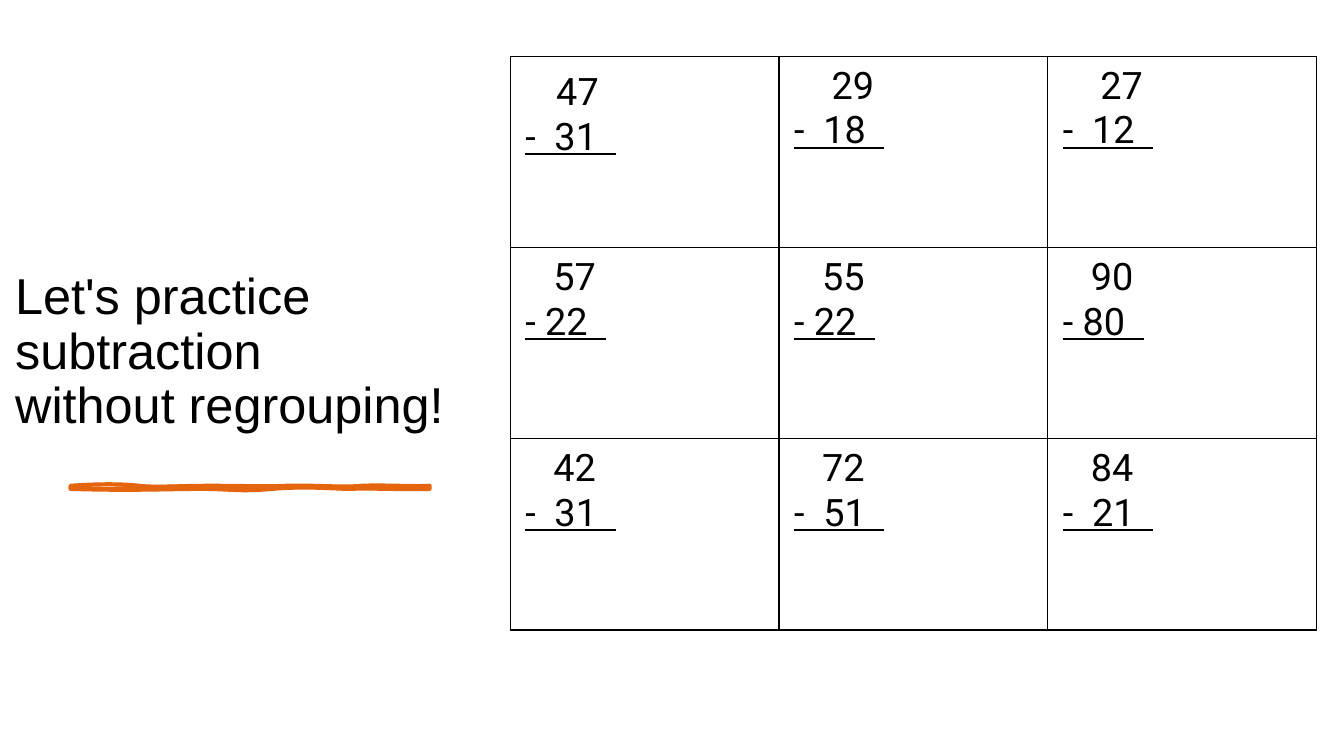
from copy import deepcopy

from lxml import etree
from pptx import Presentation
from pptx.dml.color import RGBColor
from pptx.enum.shapes import MSO_SHAPE
from pptx.enum.text import MSO_ANCHOR, MSO_AUTO_SIZE, PP_ALIGN
from pptx.oxml.ns import qn
from pptx.util import Inches, Pt

W, H = 13.33, 7.5
BLACK, WHITE, ORANGE = "000000", "FFFFFF", "E4650E"
NBSP = chr(160)
SPACE = 0.093
NARROW, WIDE = NBSP, NBSP + " "

PROBLEMS = [
    [(47, 31, 3.3, WIDE), (29, 18, 4, WIDE), (27, 12, 4, WIDE)],
    [(57, 22, 3, NARROW), (55, 22, 3, NARROW), (90, 80, 3, NARROW)],
    [(42, 31, 3, WIDE), (72, 51, 3, WIDE), (84, 21, 3, WIDE)],
]

OUTER_STROKE = [
    (27, -2, 51, -2, 68, 0), (85, 2, 107, 0, 139, 0), (171, 0, 190, 1, 214, 0),
    (238, -1, 269, 2, 289, 0), (309, -1, 342, 1, 356, 0), (356, 1, 356, 3, 356, 3),
    (338, 4, 294, 2, 278, 3), (262, 3, 234, 0, 200, 3), (165, 6, 161, 3, 129, 3),
    (96, 3, 62, 5, 0, 3), (0, 2, 0, 1, 0, 0),
]
INNER_STROKE = [
    (32, 2, 40, 1, 68, 0), (96, -1, 99, -2, 129, 0), (158, 2, 191, 1, 207, 0),
    (223, -1, 257, 3, 274, 0), (292, -2, 327, 4, 356, 0), (356, 2, 356, 2, 356, 3),
    (342, 3, 302, 6, 285, 3), (268, 1, 239, 3, 207, 3), (174, 3, 170, 2, 146, 3),
    (123, 4, 109, 2, 75, 3), (41, 4, 22, 3, 0, 3), (0, 2, 0, 2, 0, 0),
]


def rgb(color):
    """Turn a hex string into a colour."""
    return RGBColor.from_string(color)


def add_run(p, text, size, font, underline=None):
    """Add one black run to a paragraph."""
    r = p.add_run()
    r.text = text
    r.font.size, r.font.name, r.font.underline = Pt(size), font, underline
    r.font.color.rgb = rgb(BLACK)


def add_backdrop(s):
    """Cover the slide with a white panel behind everything else."""
    sp = s.shapes.add_shape(MSO_SHAPE.RECTANGLE, 0, 0, Inches(W), Inches(H))
    sp.shadow.inherit = False
    sp.fill.solid()
    sp.fill.fore_color.rgb = rgb(WHITE)
    sp.line.fill.background()
    s.shapes.title._element.addprevious(sp._element)


def add_title(s, x, y, w, h):
    """Place the title in its box, set at the bottom left."""
    sp = s.shapes.title
    sp.left, sp.top, sp.width, sp.height = map(Inches, (x, y, w, h))
    tf = sp.text_frame
    tf.word_wrap, tf.auto_size = True, MSO_AUTO_SIZE.NONE
    tf.vertical_anchor = MSO_ANCHOR.BOTTOM
    p = tf.paragraphs[0]
    p.alignment, p.line_spacing = PP_ALIGN.LEFT, 0.9
    add_run(p, f"Let's practice subtraction without{NBSP}regrouping!", 36, "Arial")


def set_curves(outline, curves):
    """Replace the segments of an outline with cubic curves."""
    for part in outline[1:]:
        outline.remove(part)
    for curve in curves:
        bez = etree.SubElement(outline, qn("a:cubicBezTo"))
        for x, y in zip(curve[::2], curve[1::2]):
            etree.SubElement(bez, qn("a:pt"), x=str(x), y=str(y))
    etree.SubElement(outline, qn("a:close"))


def add_brush_line(s, x, y):
    """Draw the brush line as an outlined stroke and a filled stroke."""
    fb = s.shapes.build_freeform(0, 0, scale=Inches(0.01))
    fb.add_line_segments([curve[-2:] for curve in OUTER_STROKE])
    sp = fb.convert_to_shape(Inches(x), Inches(y))
    sp.shadow.inherit = False
    sp.fill.solid()
    sp.fill.fore_color.rgb = sp.line.color.rgb = rgb(ORANGE)
    sp.line.width = Pt(3)
    outer = next(sp._element.iter(qn("a:path")))
    inner = deepcopy(outer)
    outer.addnext(inner)
    outer.set("fill", "none")
    inner.set("stroke", "0")
    set_curves(outer, OUTER_STROKE)
    set_curves(inner, INNER_STROKE)


def add_borders(cell):
    """Give a cell thin black borders and no fill."""
    tcPr = cell._tc.get_or_add_tcPr()
    for side in ("lnL", "lnR", "lnT", "lnB"):
        ln = etree.SubElement(tcPr, qn(f"a:{side}"), w=str(Pt(1)))
        fill = etree.SubElement(ln, qn("a:solidFill"))
        etree.SubElement(fill, qn("a:srgbClr"), val=BLACK)
    cell.fill.background()


def add_problem(cell, top, bottom, indent, gap):
    """Write one subtraction, with the top number indented by spaces' width."""
    tf = cell.text_frame
    p = tf.paragraphs[0]
    pPr = p._p.get_or_add_pPr()
    pPr.set("marL", str(Inches(indent * SPACE)))
    pPr.set("indent", "0")
    add_run(p, str(top), 27, "Roboto")
    add_run(tf.add_paragraph(), f"-{gap}{bottom}{NBSP}{NBSP}", 27, "Roboto", True)


def add_problem_table(s, x, y, w, h):
    """Fill the box with an even grid of subtraction problems."""
    rows, cols = len(PROBLEMS), len(PROBLEMS[0])
    table = s.shapes.add_table(rows, cols, *map(Inches, (x, y, w, h))).table
    table.first_row = table.horz_banding = False
    for i, row in enumerate(PROBLEMS):
        table.rows[i].height = Inches(h / rows)
        for j, problem in enumerate(row):
            table.columns[j].width = Inches(w / cols)
            cell = table.cell(i, j)
            cell.margin_left = cell.margin_right = Inches(0.15)
            cell.margin_top = cell.margin_bottom = Inches(0.08)
            add_borders(cell)
            add_problem(cell, *problem)
    table.cell(0, 0).margin_top = Inches(0.14)


def main():
    """Build the practice slide."""
    prs = Presentation()
    prs.slide_width, prs.slide_height = Inches(W), Inches(H)
    s = prs.slides.add_slide(prs.slide_layouts[5])
    add_backdrop(s)
    add_title(s, 0.05, 0.06 * H, 4.85, 3.91)
    add_brush_line(s, 0.7, 4.82)
    add_problem_table(s, 5.06, 0.56, 0.6 * W, 5.69)
    prs.save("out.pptx")


if __name__ == "__main__":
    main()
